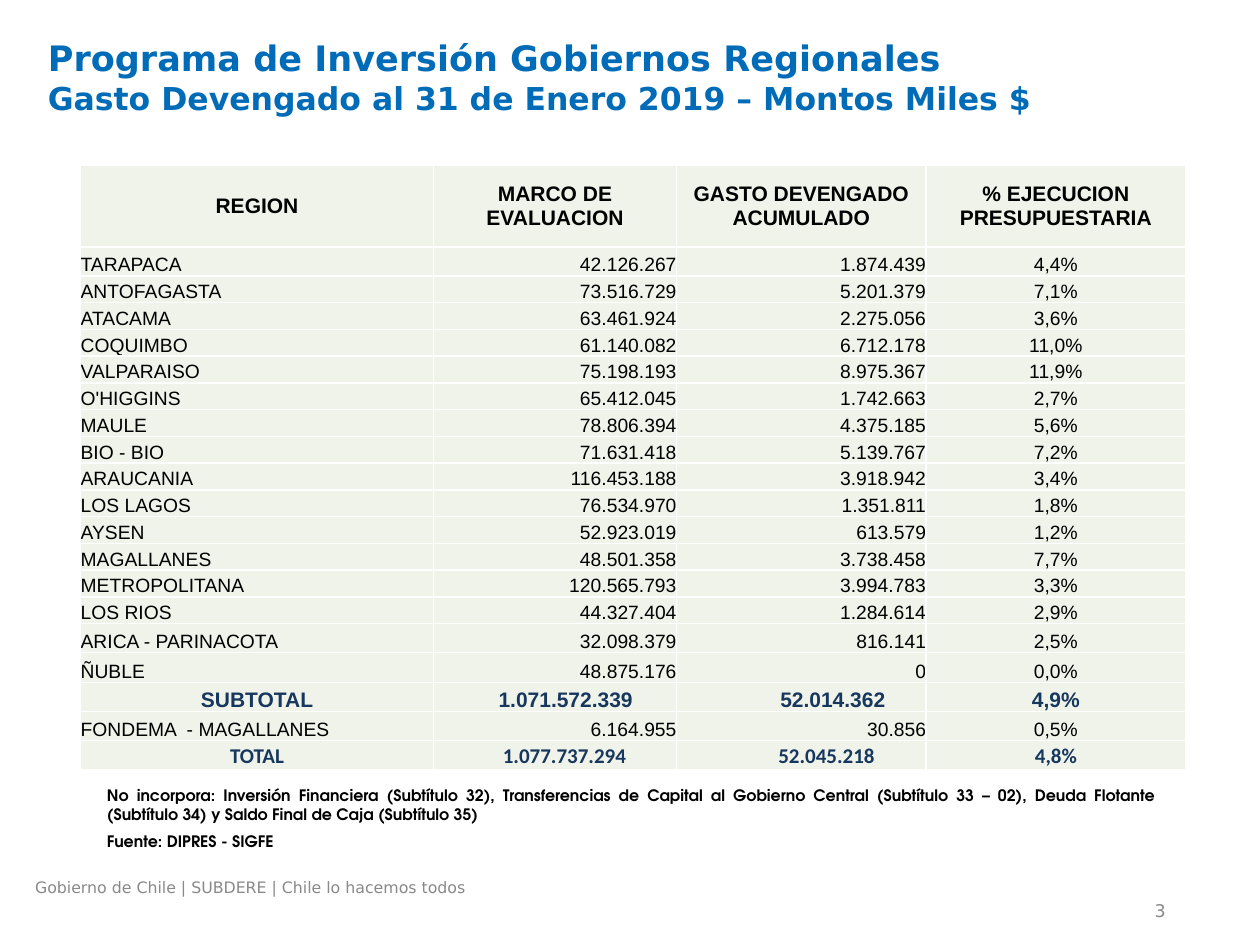
"""Build the slide on regional government investment spending."""
import pptx
import pptx.dml.color
import pptx.enum.text
import pptx.oxml
import pptx.oxml.ns
import pptx.util

Inches = pptx.util.Inches
Pt = pptx.util.Pt
ALIGN = pptx.enum.text.PP_ALIGN
ANCHOR = pptx.enum.text.MSO_ANCHOR
COLORS = {"title": "006CB7", "footer": "898989", "text": "000000",
          "total": "17375E", "cell": "EFF3EA", "border": "FFFFFF"}


def add_span(para, text, size, font, color, bold=False):
    span = para.add_run()
    span.text = text
    span.font.size = Pt(size)
    span.font.name = font
    span.font.bold = bold
    span.font.color.rgb = pptx.dml.color.RGBColor.from_string(COLORS[color])


def add_box(left, top, width, height):
    frame = page.shapes.add_textbox(Inches(left), Inches(top), Inches(width), Inches(height)).text_frame
    frame.word_wrap = True
    return frame


deck = pptx.Presentation()
deck.slide_width = Inches(10)
deck.slide_height = Inches(7.5)
page = deck.slides.add_slide(deck.slide_layouts[5])

title = page.shapes.title
title.left, title.top, title.width, title.height = Inches(0.28), Inches(0.24), Inches(8.7), Inches(0.94)
title.text_frame.word_wrap = True
title.text_frame.auto_size = pptx.enum.text.MSO_AUTO_SIZE.NONE
title.text_frame.vertical_anchor = ANCHOR.TOP
para = title.text_frame.paragraphs[0]
para.alignment = ALIGN.LEFT
add_span(para, "Programa de Inversión Gobiernos Regionales", 20, "DejaVu Sans", "title", True)
para.add_line_break()
add_span(para, "Gasto Devengado al 31 de Enero 2019 – Montos Miles $", 18, "DejaVu Sans", "title", True)

rows = [
    ("REGION", "MARCO DE EVALUACION", "GASTO DEVENGADO ACUMULADO", "% EJECUCION PRESUPUESTARIA"),
    ("TARAPACA", "42.126.267", "1.874.439", "4,4%"),
    ("ANTOFAGASTA", "73.516.729", "5.201.379", "7,1%"),
    ("ATACAMA", "63.461.924", "2.275.056", "3,6%"),
    ("COQUIMBO", "61.140.082", "6.712.178", "11,0%"),
    ("VALPARAISO", "75.198.193", "8.975.367", "11,9%"),
    ("O'HIGGINS", "65.412.045", "1.742.663", "2,7%"),
    ("MAULE", "78.806.394", "4.375.185", "5,6%"),
    ("BIO - BIO", "71.631.418", "5.139.767", "7,2%"),
    ("ARAUCANIA", "116.453.188", "3.918.942", "3,4%"),
    ("LOS LAGOS", "76.534.970", "1.351.811", "1,8%"),
    ("AYSEN", "52.923.019", "613.579", "1,2%"),
    ("MAGALLANES", "48.501.358", "3.738.458", "7,7%"),
    ("METROPOLITANA", "120.565.793", "3.994.783", "3,3%"),
    ("LOS RIOS", "44.327.404", "1.284.614", "2,9%"),
    ("ARICA - PARINACOTA", "32.098.379", "816.141", "2,5%"),
    ("ÑUBLE", "48.875.176", "0", "0,0%"),
    ("SUBTOTAL", "1.071.572.339", "52.014.362", "4,9%"),
    ("FONDEMA  - MAGALLANES", "6.164.955", "30.856", "0,5%"),
    ("TOTAL", "1.077.737.294", "52.045.218", "4,8%"),
]
column_widths = [2.8, 1.93, 1.98, 2.06]
table_height = 4.8
special_heights = {0: 0.65, 1: 0.23, 15: 0.23, 16: 0.24, 17: 0.23, 18: 0.23, 19: 0.23}
region_height = (table_height - sum(special_heights.values())) / (len(rows) - len(special_heights))
total_indents = {"SUBTOTAL": (0, 0.17, 0.5, 0), "TOTAL": (0, 0.15, 0.4, 0)}
region_alignments = [ALIGN.LEFT, ALIGN.RIGHT, ALIGN.RIGHT, ALIGN.CENTER]

table = page.shapes.add_table(len(rows), len(column_widths), Inches(0.64), Inches(1.31),
                              Inches(sum(column_widths)), Inches(table_height)).table
for column, width in zip(table.columns, column_widths):
    column.width = Inches(width)
for row_index, values in enumerate(rows):
    table.rows[row_index].height = Inches(special_heights.get(row_index, region_height))
    is_header = row_index == 0
    is_total = values[0] in total_indents
    strong = is_header or is_total
    indents = total_indents.get(values[0], (0, 0, 0, 0))
    for column_index, text in enumerate(values):
        cell = table.cell(row_index, column_index)
        cell.margin_left = Inches(indents[column_index])
        cell.margin_right = cell.margin_top = cell.margin_bottom = 0
        cell.vertical_anchor = ANCHOR.MIDDLE if is_header else ANCHOR.BOTTOM
        para = cell.text_frame.paragraphs[0]
        para.alignment = ALIGN.CENTER if strong else region_alignments[column_index]
        add_span(para, text, 12 if strong else 11, "Calibri" if values[0] == "TOTAL" else "Arial",
                 "total" if is_total else "text", strong)
        properties = cell._tc.get_or_add_tcPr()
        for side in ("lnL", "lnR", "lnT", "lnB"):
            properties.append(pptx.oxml.parse_xml(
                f'<a:{side} {pptx.oxml.ns.nsdecls("a")} w="{Pt(1)}"><a:solidFill>'
                f'<a:srgbClr val="{COLORS["border"]}"/></a:solidFill></a:{side}>'))
        cell.fill.solid()
        cell.fill.fore_color.rgb = pptx.dml.color.RGBColor.from_string(COLORS["cell"])

notes = add_box(0.75, 6.19, 8.51, 0.63)
para = notes.paragraphs[0]
para.alignment = ALIGN.JUSTIFY
add_span(para, "No incorpora: Inversión Financiera (Subtítulo 32), Transferencias de Capital al Gobierno Central "
         "(Subtítulo 33 – 02), Deuda Flotante (Subtítulo 34) y Saldo Final de Caja (Subtítulo 35)",
         9, "TeX Gyre Adventor", "text", True)
para = notes.add_paragraph()
para.space_before = Pt(4.5)
add_span(para, "Fuente: DIPRES - SIGFE", 9, "TeX Gyre Adventor", "text", True)

footer = add_box(0.18, 6.92, 6.48, 0.27)
add_span(footer.paragraphs[0], "Gobierno de Chile | SUBDERE | Chile lo hacemos todos", 9, "DejaVu Sans", "footer")

page_number = add_box(7.02, 7.12, 2.33, 0.21)
page_number.vertical_anchor = ANCHOR.MIDDLE
page_number.paragraphs[0].alignment = ALIGN.RIGHT
add_span(page_number.paragraphs[0], "3", 10, "DejaVu Sans", "footer")

deck.save("out.pptx")
